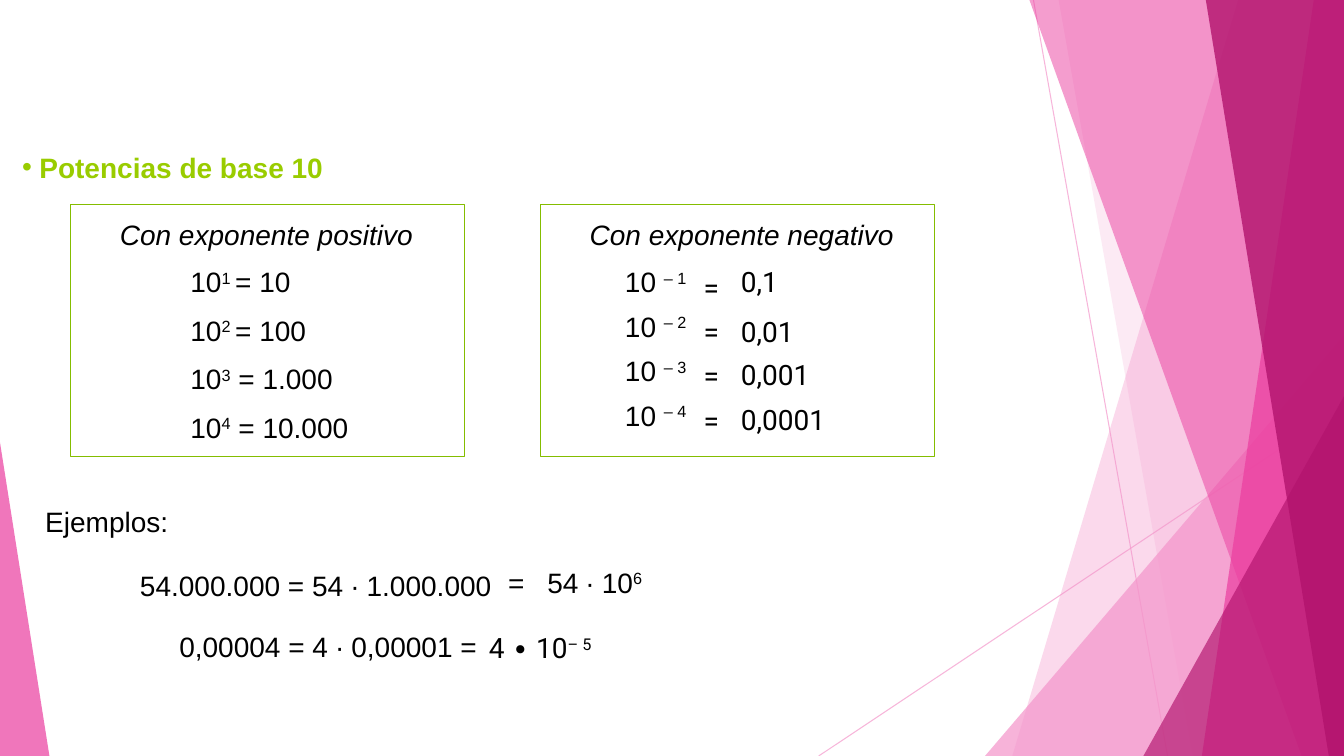
import pptx
import pptx.dml.color
import pptx.enum.shapes
import pptx.enum.text
import pptx.oxml
import pptx.oxml.ns
import pptx.util
from pptx.util import Inches

RGBColor = pptx.dml.color.RGBColor
BLACK = RGBColor(0x00, 0x00, 0x00)
WHITE = RGBColor(0xFF, 0xFF, 0xFF)
LIME = RGBColor(0x99, 0xCC, 0x00)
GREEN = RGBColor(0x84, 0xBD, 0x00)
LIGHT_PINK = RGBColor(0xF4, 0x96, 0xCB)
PINK = RGBColor(0xEB, 0x3D, 0x9F)
MAGENTA = RGBColor(0xB2, 0x13, 0x6D)
WIDTH, HEIGHT = 13.33, 7.5


def drawing_element(tag, **attributes):
    element = pptx.oxml.parse_xml(f"<a:{tag} {pptx.oxml.ns.nsdecls('a')}/>")
    for name, value in attributes.items():
        element.set(name, str(value))
    return element


class SlideBuilder:
    def __init__(self, slide):
        self.slide = slide
        self.size = pptx.util.Pt(20)

    def set_opacity(self, properties, percent):
        for color in properties.iter(pptx.oxml.ns.qn("a:srgbClr")):
            color.append(drawing_element("alpha", val=percent * 1000))

    def paint(self, shape, color, opacity):
        shape.shadow.inherit = False
        shape.fill.solid()
        shape.fill.fore_color.rgb = color
        shape.line.fill.background()
        self.set_opacity(shape._element.spPr, opacity)

    def line(self, start, end):
        connector = self.slide.shapes.add_connector(
            pptx.enum.shapes.MSO_CONNECTOR.STRAIGHT, *map(Inches, start + end))
        connector.line.color.rgb = LIGHT_PINK
        connector.line.width = pptx.util.Pt(0.75)
        properties = connector._element.spPr
        properties.append(drawing_element("effectLst"))
        self.set_opacity(properties, 70)

    def band(self, top_x, bottom_x, color, opacity):
        """Fill from a slanted left edge to the right side of the slide."""
        builder = self.slide.shapes.build_freeform(Inches(top_x), 0)
        corners = [(WIDTH, 0), (WIDTH, HEIGHT), (bottom_x, HEIGHT)]
        builder.add_line_segments([(Inches(x), Inches(y)) for x, y in corners], close=True)
        self.paint(builder.convert_to_shape(), color, opacity)

    def triangle(self, left, top, width, apex, color, opacity):
        """Stand a triangle on the bottom edge; apex is 0 for left, 1 for right."""
        shape = self.slide.shapes.add_shape(
            pptx.enum.shapes.MSO_SHAPE.ISOSCELES_TRIANGLE,
            Inches(left), Inches(top), Inches(width), Inches(HEIGHT - top))
        shape.adjustments[0] = apex
        self.paint(shape, color, opacity)

    def frame(self, left):
        shape = self.slide.shapes.add_shape(
            pptx.enum.shapes.MSO_SHAPE.RECTANGLE,
            Inches(left), Inches(2.03), Inches(3.91), Inches(2.5))
        self.paint(shape, WHITE, 100)
        shape.line.color.rgb = GREEN
        shape.line.width = pptx.util.Pt(0.75)

    def add_run(self, paragraph, text, font="Arial", color=BLACK,
                bold=False, italic=False, raised=False):
        run = paragraph.add_run()
        run.text = text
        run.font.name = font
        run.font.size = self.size
        run.font.color.rgb = color
        run.font.bold = bold
        run.font.italic = italic
        if raised:
            run._r.get_or_add_rPr().set("baseline", "30000")

    def heading(self, text):
        title = self.slide.shapes.title
        title.left, title.top = Inches(0.12), Inches(1.44)
        title.width, title.height = Inches(3.4), Inches(0.44)
        frame = title.text_frame
        frame.word_wrap = True
        frame.auto_size = pptx.enum.text.MSO_AUTO_SIZE.NONE
        frame.vertical_anchor = pptx.enum.text.MSO_ANCHOR.TOP
        paragraph = frame.paragraphs[0]
        paragraph.alignment = pptx.enum.text.PP_ALIGN.LEFT
        self.add_run(paragraph, text, color=LIME, bold=True)
        properties = paragraph._p.get_or_add_pPr()
        properties.set("marL", str(Inches(0.17)))
        properties.set("indent", str(-Inches(0.17)))
        properties.append(drawing_element("buFont", typeface="Arial"))
        properties.append(drawing_element("buChar", char="•"))

    def text(self, left, top, width, base, exponent="", rest="", **style):
        """Write a line whose exponent, if any, is raised."""
        box = self.slide.shapes.add_textbox(
            Inches(left), Inches(top), Inches(width), Inches(0.43))
        box.text_frame.word_wrap = True
        paragraph = box.text_frame.paragraphs[0]
        for part, raised in ((base, False), (exponent, True), (rest, False)):
            if part:
                self.add_run(paragraph, part, raised=raised, **style)


def draw_background(builder):
    builder.line((10.25, 0), (11.58, HEIGHT))
    builder.line((WIDTH, 4.03), (8.12, HEIGHT))
    builder.band(12.28, 10.04, LIGHT_PINK, 36)
    builder.band(10.5, 11.83, LIGHT_PINK, 20)
    builder.triangle(9.77, 3.33, 3.56, 1, LIGHT_PINK, 72)
    builder.band(10.21, 12.91, PINK, 50)
    builder.band(13.03, 11.92, PINK, 70)
    builder.band(11.96, 13.18, MAGENTA, 80)
    builder.triangle(11.34, 3.93, 1.99, 1, MAGENTA, 66)
    builder.triangle(0, 4.39, 0.49, 0, PINK, 70)


def draw_positive_powers(builder):
    builder.frame(0.7)
    builder.text(1.09, 2.11, 3.5, "Con exponente positivo", italic=True)
    powers = [("1 ", "= 10"), ("2 ", "= 100"), ("3", " = 1.000"), ("4", " = 10.000")]
    for row, (exponent, value) in enumerate(powers):
        builder.text(1.79, 2.58 + 0.48 * row, 2.36, "10", exponent, value)


def draw_negative_powers(builder):
    builder.frame(5.36)
    builder.text(5.75, 2.11, 3.5, "Con exponente negativo", italic=True)
    values = [("0,1", 2.58), ("0,01", 3.07), ("0,001", 3.5), ("0,0001", 3.94)]
    for row, (value, value_top) in enumerate(values):
        top = 2.58 + 0.44 * row
        builder.text(6.1, top, 1.26, "10 ", f"– {row + 1}")
        builder.text(6.88, top + 0.05, 0.39, "=", font="Roboto")
        builder.text(7.25, value_top, 1.89, value, font="Roboto")


def draw_examples(builder):
    builder.text(0.35, 4.96, 1.73, "Ejemplos:")
    builder.text(1.29, 5.59, 3.8, "54.000.000 = 54 ∙ 1.000.000")
    builder.text(4.94, 5.56, 0.39, "=")
    builder.text(5.33, 5.56, 1.34, "54 ∙ 10", "6")
    builder.text(1.68, 6.2, 3.3, "0,00004 = 4 ∙ 0,00001 =")
    builder.text(4.75, 6.21, 1.85, "4 ∙ 10", "– 5", font="Roboto")


def main():
    presentation = pptx.Presentation()
    presentation.slide_width = Inches(WIDTH)
    presentation.slide_height = Inches(HEIGHT)
    title_only = presentation.slide_layouts[5]
    builder = SlideBuilder(presentation.slides.add_slide(title_only))
    draw_background(builder)
    builder.heading("Potencias de base 10")
    draw_positive_powers(builder)
    draw_negative_powers(builder)
    draw_examples(builder)
    presentation.save("out.pptx")


if __name__ == "__main__":
    main()
